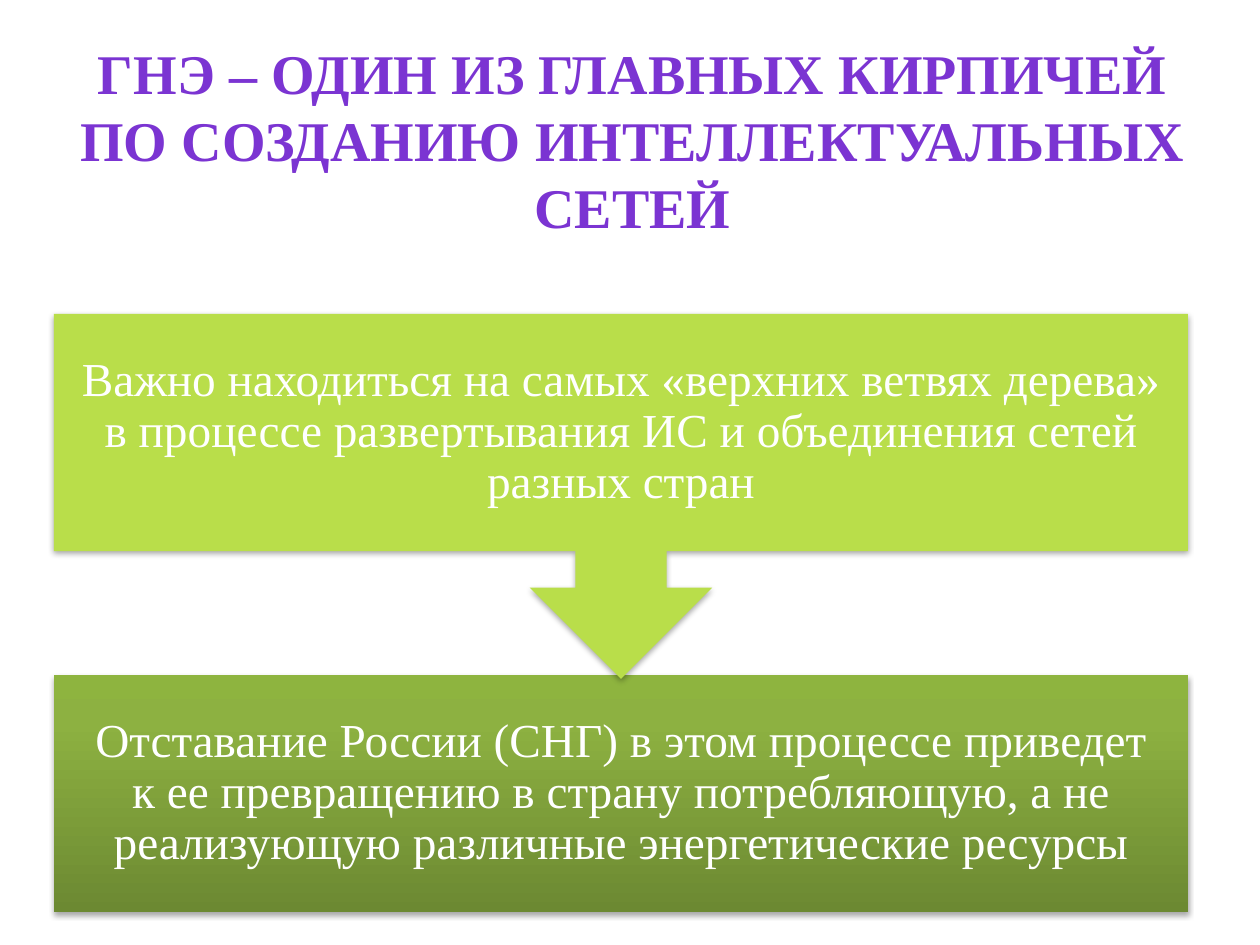
from copy import deepcopy

from lxml import etree
from pptx import Presentation
from pptx.dml.color import RGBColor
from pptx.enum.shapes import MSO_SHAPE
from pptx.enum.text import MSO_ANCHOR, PP_ALIGN
from pptx.oxml.ns import qn
from pptx.util import Emu, Pt

TOP, MIDDLE = MSO_ANCHOR.TOP, MSO_ANCHOR.MIDDLE
CENTER = PP_ALIGN.CENTER
CALLOUT, RECTANGLE = MSO_SHAPE.DOWN_ARROW_CALLOUT, MSO_SHAPE.RECTANGLE
SCALE = 914400 / 126
FONT = "Times New Roman"


def px(length):
    return Emu(round(length * SCALE))


def write(shape, text, color, anchor, inset, font):
    """Fill a shape with one centred paragraph and return that paragraph."""
    frame = shape.text_frame
    frame.word_wrap = True
    frame.vertical_anchor = anchor
    for side in ("left", "top", "right", "bottom"):
        setattr(frame, f"margin_{side}", px(inset))
    paragraph = frame.paragraphs[0]
    paragraph.alignment = CENTER
    run = paragraph.add_run()
    run.text = text
    for name, value in font.items():
        setattr(run.font, name, value)
    run.font.color.rgb = RGBColor.from_string(color)
    return paragraph


prs = Presentation()
prs.slide_width, prs.slide_height = px(1260), px(945)
slide = prs.slides.add_slide(prs.slide_layouts[5])

title = slide.shapes.title
title.left, title.top, title.width, title.height = px(37), px(26), px(1191), px(217)
write(title, "ГНЭ – ОДИН ИЗ ГЛАВНЫХ КИРПИЧЕЙ ПО СОЗДАНИЮ ИНТЕЛЛЕКТУАЛЬНЫХ СЕТЕЙ",
      "7B34D2", TOP, 12, {"name": FONT, "size": Pt(32), "bold": True})

# The arrow of the first statement points down at the second one.
statements = [
    (RECTANGLE, 675, 237, [(0, "6C8932"), (0.8, "8DB141"), (1, "8EB43F")],
     "Отставание России (СНГ) в этом процессе приведет к ее превращению в страну "
     "потребляющую, а не реализующую различные энергетические ресурсы"),
    (CALLOUT, 314, 365, [(0, "B9DE4A")],
     "Важно находиться на самых «верхних ветвях дерева» в процессе развертывания ИС "
     "и объединения сетей разных стран"),
]
for kind, top, height, stops, text in statements:
    box = slide.shapes.add_shape(kind, px(54), px(top), px(1134), px(height))
    box.line.fill.background()

    if len(stops) == 1:
        box.fill.solid()
        box.fill.fore_color.rgb = RGBColor.from_string(stops[0][1])
    else:
        box.fill.gradient()
        box.fill.gradient_angle = 90
        stop_list = box._element.spPr.find(qn("a:gradFill")).find(qn("a:gsLst"))
        stop_list.append(deepcopy(stop_list[-1]))
        for stop, (position, color) in zip(box.fill.gradient_stops, stops):
            stop.position = position
            stop.color.rgb = RGBColor.from_string(color)

    box.shadow.inherit = False
    effects = box._element.spPr.find(qn("a:effectLst"))
    shadow = etree.SubElement(effects, qn("a:outerShdw"), blurRad="40000",
                              dist="23000", dir="5400000", rotWithShape="0")
    shade = etree.SubElement(shadow, qn("a:srgbClr"), val="000000")
    etree.SubElement(shade, qn("a:alpha"), val="35000")

    paragraph = write(box, text, "FFFFFF", MIDDLE, 26, {"name": FONT, "size": Pt(27)})
    paragraph.line_spacing = 0.9

prs.save("out.pptx")
